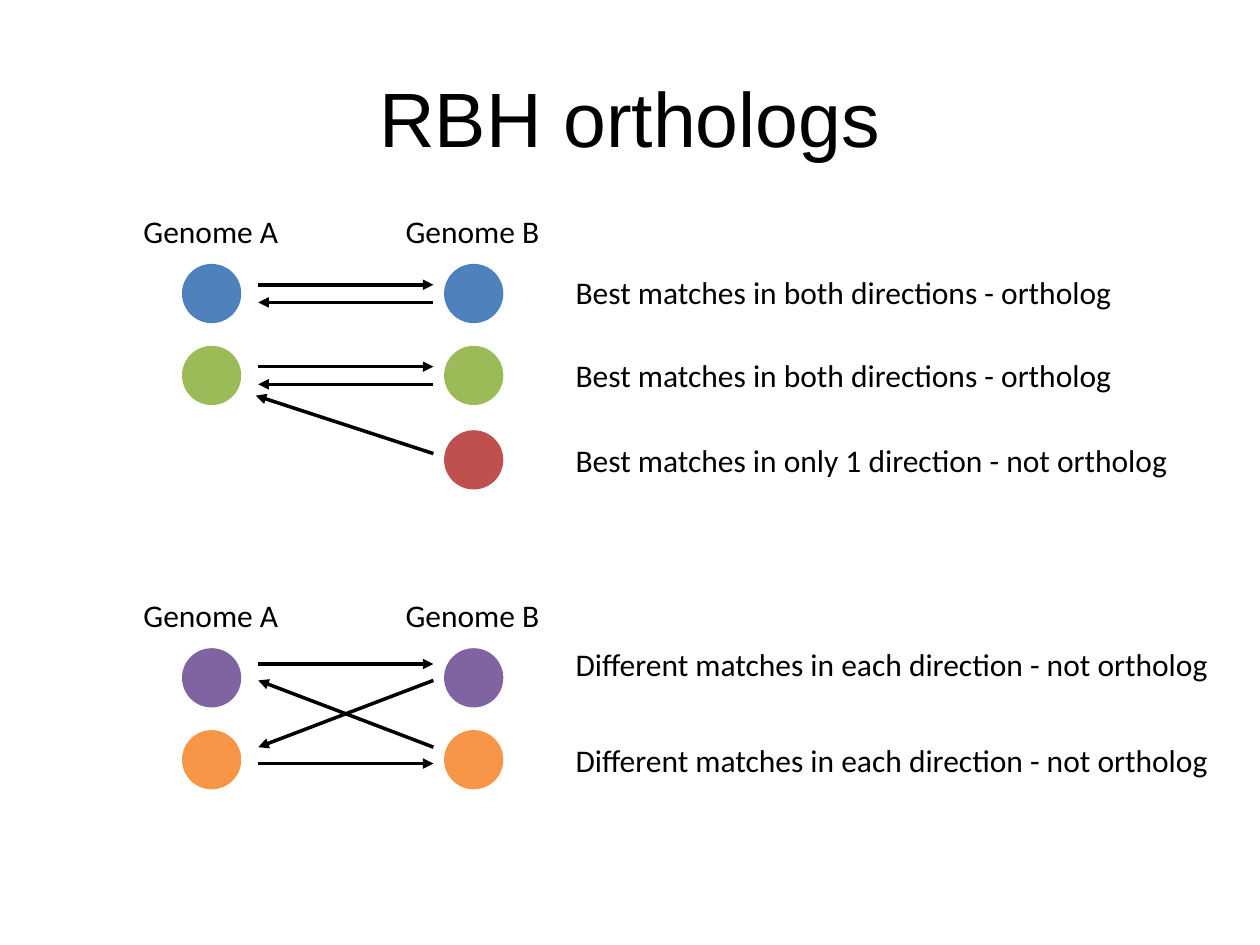
from dataclasses import dataclass

from lxml import etree
from pptx import Presentation
from pptx.dml.color import RGBColor
from pptx.enum.shapes import MSO_CONNECTOR, MSO_SHAPE
from pptx.enum.text import MSO_ANCHOR, MSO_AUTO_SIZE, PP_ALIGN
from pptx.oxml.ns import qn
from pptx.slide import Slide
from pptx.util import Inches, Pt

OVAL = MSO_SHAPE.OVAL
STRAIGHT = MSO_CONNECTOR.STRAIGHT
MIDDLE = MSO_ANCHOR.MIDDLE
CENTER = PP_ALIGN.CENTER
LEFT = PP_ALIGN.LEFT
GROW = MSO_AUTO_SIZE.SHAPE_TO_FIT_TEXT

BLACK = RGBColor(0x00, 0x00, 0x00)
BLUE = RGBColor(0x4F, 0x81, 0xBD)
BLUE_LINE = RGBColor(0x4B, 0x7E, 0xBC)
GREEN = RGBColor(0x9B, 0xBB, 0x59)
RED = RGBColor(0xC0, 0x50, 0x4D)
PURPLE = RGBColor(0x80, 0x64, 0xA2)
ORANGE = RGBColor(0xF7, 0x96, 0x46)

GENOME_A, GENOME_B = 1.45, 3.53
ARROW_LEFT, ARROW_RIGHT = 2.05, 3.44
GENE_SIZE = 0.46
UPPER_TOP, LOWER_TOP = 2.1, 5.15
ROW_STEP = 0.65

BOTH = "Best matches in both directions - ortholog"
ONE_WAY = "Best matches in only 1 direction - not ortholog"
DIFFERENT = "Different matches in each direction - not ortholog"


def write_text(frame, text, font="Calibri", size=18, color=BLACK, align=LEFT):
    paragraph = frame.paragraphs[0]
    paragraph.alignment = align
    run = paragraph.add_run()
    run.text = text
    run.font.name = font
    run.font.size = Pt(size)
    run.font.color.rgb = color


@dataclass
class OrthologSlide:
    slide: Slide
    arrow_width: float = 2
    outline_width: float = 0.75
    label_height: float = 0.4

    def title(self, text):
        title = self.slide.shapes.title
        title.left, title.top = Inches(0.5), Inches(0.3)
        title.width, title.height = Inches(9), Inches(1.25)
        title.text_frame.vertical_anchor = MIDDLE
        write_text(title.text_frame, text, font="Arial", size=44, align=CENTER)

    def label(self, text, left, top, width):
        box = self.slide.shapes.add_textbox(
            Inches(left), Inches(top), Inches(width), Inches(self.label_height))
        box.text_frame.word_wrap = False
        box.text_frame.auto_size = GROW
        write_text(box.text_frame, text)

    def gene(self, left, top, fill, outline):
        shape = self.slide.shapes.add_shape(
            OVAL, Inches(left), Inches(top), Inches(GENE_SIZE), Inches(GENE_SIZE))
        shape.shadow.inherit = False
        shape.fill.solid()
        shape.fill.fore_color.rgb = fill
        shape.line.color.rgb = outline
        shape.line.width = Pt(self.outline_width)

    def arrow(self, start_x, start_y, end_x, end_y):
        connector = self.slide.shapes.add_connector(
            STRAIGHT, Inches(start_x), Inches(start_y), Inches(end_x), Inches(end_y))
        connector.line.color.rgb = BLACK
        connector.line.width = Pt(self.arrow_width)
        properties = connector._element.spPr
        line = properties.find(qn("a:ln"))
        etree.SubElement(line, qn("a:tailEnd"), type="triangle")
        etree.SubElement(properties, qn("a:effectLst"))

    def arrow_to_b(self, start_y, end_y):
        self.arrow(ARROW_LEFT, start_y, ARROW_RIGHT, end_y)

    def arrow_to_a(self, start_y, end_y):
        self.arrow(ARROW_RIGHT, start_y, ARROW_LEFT, end_y)

    def gene_pair(self, top, fill, outline):
        for left in (GENOME_A, GENOME_B):
            self.gene(left, top, fill, outline)

    def genome_headings(self, group_top):
        self.label("Genome A", 1.04, group_top - 0.47, 1.29)
        self.label("Genome B", 3.12, group_top - 0.47, 1.29)


def main():
    presentation = Presentation()
    presentation.slide_width, presentation.slide_height = Inches(10), Inches(7.5)
    page = OrthologSlide(presentation.slides.add_slide(presentation.slide_layouts[5]))
    page.title("RBH orthologs")

    for group_top in (UPPER_TOP, LOWER_TOP):
        page.genome_headings(group_top)

    for row, (fill, outline) in enumerate([(BLUE, BLUE_LINE), (GREEN, GREEN)]):
        top = UPPER_TOP + row * ROW_STEP
        page.gene_pair(top, fill, outline)
        page.arrow_to_b(top + 0.16, top + 0.16)
        page.arrow_to_a(top + 0.3, top + 0.3)

    page.gene(GENOME_B, 3.42, RED, RED)
    page.arrow(ARROW_RIGHT, 3.6, 2.03, 3.14)

    for row, fill in enumerate([PURPLE, ORANGE]):
        page.gene_pair(LOWER_TOP + row * ROW_STEP, fill, fill)
    for straight_y, start_y, end_y in [(5.27, 5.4, 5.93), (6.06, 5.93, 5.4)]:
        page.arrow_to_b(straight_y, straight_y)
        page.arrow_to_a(start_y, end_y)

    for text, top, width in [
        (BOTH, 2.12, 4.51),
        (BOTH, 2.78, 4.51),
        (ONE_WAY, 3.45, 4.96),
        (DIFFERENT, 5.07, 5.47),
        (DIFFERENT, 5.83, 5.47),
    ]:
        page.label(text, 4.47, top, width)

    presentation.save("out.pptx")


if __name__ == "__main__":
    main()
